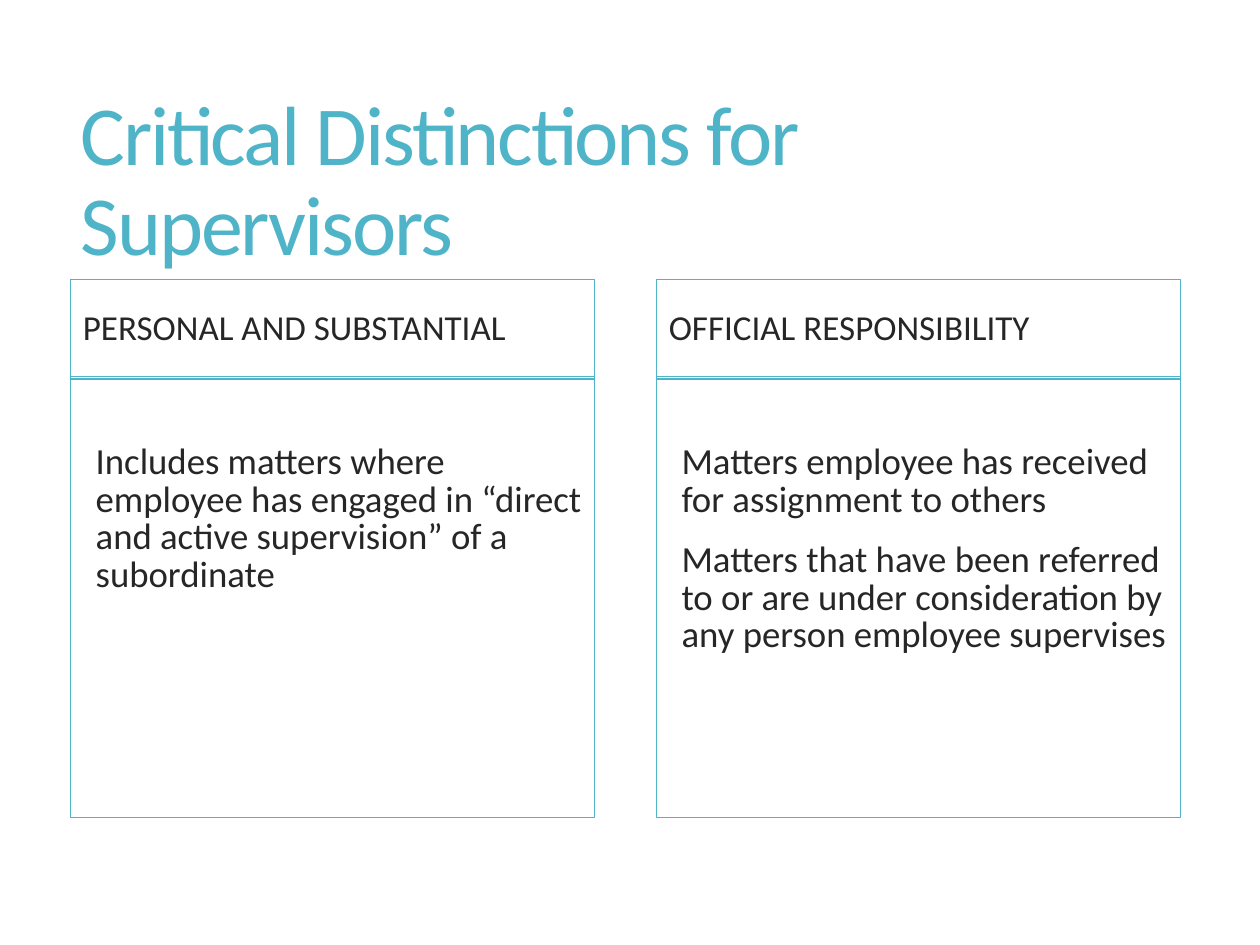
from pptx import Presentation
from pptx.dml.color import RGBColor
from pptx.enum.shapes import MSO_SHAPE
from pptx.enum.text import MSO_ANCHOR, MSO_AUTO_SIZE, PP_ALIGN
from pptx.util import Pt

TEAL = RGBColor(0x50, 0xB4, 0xC8)
INK = RGBColor(0x26, 0x26, 0x26)
FONT = "Calibri"
HEADING_HEIGHT = 56.9
HEADING_OVERLAP = 1.4
COLUMN_TOP, COLUMN_WIDTH, COLUMN_HEIGHT = 159.8, 299.5, 307.5
COLUMN_LEFT, COLUMN_STEP = 40.3, 334.8
COLUMNS = [
    ("PERSONAL AND SUBSTANTIAL", [
        "Includes matters where employee has engaged in “direct and active "
        "supervision” of a subordinate",
    ]),
    ("OFFICIAL RESPONSIBILITY", [
        "Matters employee has received for assignment to others",
        "Matters that have been referred to or are under consideration by any "
        "person employee supervises",
    ]),
]


def format_text(text_frame, size, color, line_spacing, space_before=0):
    """Format every paragraph and run of a text frame."""
    text_frame.word_wrap = True
    for paragraph in text_frame.paragraphs:
        paragraph.alignment = PP_ALIGN.LEFT
        paragraph.line_spacing = line_spacing
        paragraph.space_before = Pt(space_before)
        for run in paragraph.runs:
            run.font.name = FONT
            run.font.size = Pt(size)
            run.font.color.rgb = color


def add_title(slide, text, left, top, width, height):
    """Place the slide title in the given box."""
    title = slide.shapes.title
    title.left, title.top = Pt(left), Pt(top)
    title.width, title.height = Pt(width), Pt(height)
    text_frame = title.text_frame
    text_frame.text = text
    text_frame.auto_size = MSO_AUTO_SIZE.NONE
    text_frame.vertical_anchor = MSO_ANCHOR.MIDDLE
    format_text(text_frame, 48, TEAL, 0.9)
    for run in text_frame.paragraphs[0].runs:
        run.font._element.set("spc", "-120")


def add_panel(slide, left, top, width, height):
    """Add an outlined rectangle and return its text frame."""
    shape = slide.shapes.add_shape(
        MSO_SHAPE.RECTANGLE, Pt(left), Pt(top), Pt(width), Pt(height))
    shape.shadow.inherit = False
    shape.fill.background()
    shape.line.color.rgb = TEAL
    shape.line.width = Pt(0.75)
    return shape.text_frame


def add_column(slide, heading, statements, left, top, width, height):
    """Place a heading panel above a panel of statements."""
    heading_frame = add_panel(slide, left, top, width, HEADING_HEIGHT)
    heading_frame.text = heading
    heading_frame.vertical_anchor = MSO_ANCHOR.MIDDLE
    format_text(heading_frame, 20, INK, 0.85)

    offset = HEADING_HEIGHT - HEADING_OVERLAP
    body_frame = add_panel(slide, left, top + offset, width, height - offset)
    body_frame.text = "\n".join(statements)
    body_frame.vertical_anchor = MSO_ANCHOR.TOP
    body_frame.margin_left = Pt(14.4)
    body_frame.margin_top = Pt(39)
    format_text(body_frame, 21, INK, 0.85, space_before=13)


def main():
    """Build the slide and save it."""
    presentation = Presentation()
    presentation.slide_width, presentation.slide_height = Pt(720), Pt(540)
    slide = presentation.slides.add_slide(presentation.slide_layouts[5])
    add_title(slide, "Critical Distinctions for Supervisors", 38.9, 39.6, 636.5, 130.3)
    for index, (heading, statements) in enumerate(COLUMNS):
        add_column(slide, heading, statements, COLUMN_LEFT + index * COLUMN_STEP,
                   COLUMN_TOP, COLUMN_WIDTH, COLUMN_HEIGHT)
    presentation.save("out.pptx")


if __name__ == "__main__":
    main()
